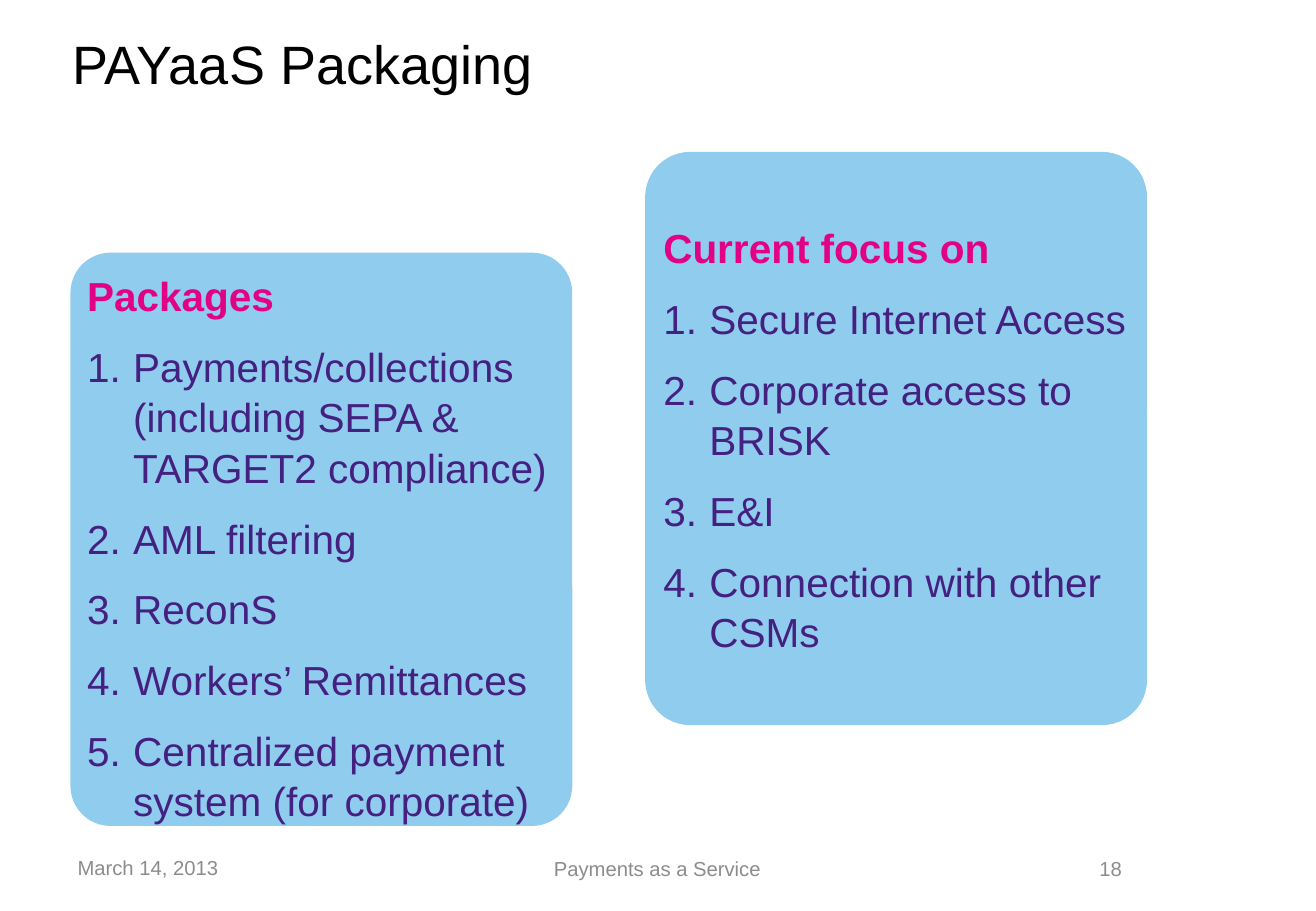
from pptx import Presentation
from pptx import util as u
from pptx.dml.color import RGBColor
from pptx.enum import shapes, text
from pptx.oxml.ns import qn
from lxml import etree

WIDE, HIGH = 10.83, 7.5
LEFT, MID, RIGHT = text.PP_ALIGN.LEFT, text.PP_ALIGN.CENTER, text.PP_ALIGN.RIGHT
TOP, CENTER = text.MSO_ANCHOR.TOP, text.MSO_ANCHOR.MIDDLE
SKY, PINK, PLUM, GRAY, BLACK = "90CCEE", "E20087", "442080", "8C8C8C", "000000"

LABELS = [
    ("PAYaaS Packaging", (0.5, 0.17, 8.62, 0.7), 32, BLACK, LEFT),
    ("March 14, 2013", (0.54, 6.95, 1.71, 0.38), 12, GRAY, LEFT),
    ("Payments as a Service", (2.32, 6.95, 6.18, 0.4), 12, GRAY, MID),
    ("18", (8.75, 6.95, 0.58, 0.4), 12, GRAY, RIGHT),
]
PANELS = [
    ("Packages", [
        "Payments/collections (including SEPA & TARGET2 compliance)",
        "AML filtering",
        "ReconS",
        "Workers’ Remittances",
        "Centralized payment system (for corporate)",
    ], 2.08, 0.08, TOP),
    ("Current focus on", [
        "Secure Internet Access",
        "Corporate access to BRISK",
        "E&I",
        "Connection with other CSMs",
    ], 1.25, 0.09, CENTER),
]
START, STEP = 0.58, 4.73
SIZE = 4.13, 4.72
PAD, INDENT = 0.04, 0.38


def color(code):
    return RGBColor.from_string(code)


def style(para, size, code, bold=False, align=LEFT):
    para.alignment = align
    font = para.font
    font.name, font.size, font.bold = "Arial", u.Pt(size), bold
    font.color.rgb = color(code)


def number(para):
    props = para._p.get_or_add_pPr()
    props.set("marL", str(u.Inches(INDENT)))
    props.set("indent", str(-u.Inches(INDENT)))
    etree.SubElement(props, qn("a:buFont")).set("typeface", "+mj-lt")
    etree.SubElement(props, qn("a:buAutoNum")).set("type", "arabicPeriod")


def label(slide, words, place, size, code, align):
    frame = slide.shapes.add_textbox(*map(u.Inches, place)).text_frame
    frame.word_wrap = True
    frame.vertical_anchor = CENTER
    frame.text = words
    style(frame.paragraphs[0], size, code, align=align)


def panel(slide, left, head, items, top, bend, anchor):
    place = map(u.Inches, (left, top, *SIZE))
    card = slide.shapes.add_shape(shapes.MSO_SHAPE.ROUNDED_RECTANGLE, *place)
    card.adjustments[0] = bend
    card.shadow.inherit = False
    card.fill.solid()
    card.fill.fore_color.rgb = color(SKY)
    card.line.fill.background()
    frame = card.text_frame
    frame.word_wrap = True
    frame.vertical_anchor = anchor
    frame.margin_left = frame.margin_right = u.Inches(PAD)
    frame.margin_top = frame.margin_bottom = u.Inches(PAD)
    frame.text = head
    first = frame.paragraphs[0]
    first.line_spacing = 1.04
    style(first, 24, PINK, True)
    for item in items:
        para = frame.add_paragraph()
        para.text = item
        para.line_spacing = 1.04
        para.space_before = u.Pt(12)
        number(para)
        style(para, 24, PLUM)


def main():
    deck = Presentation()
    deck.slide_width, deck.slide_height = u.Inches(WIDE), u.Inches(HIGH)
    slide = deck.slides.add_slide(deck.slide_layouts[6])
    for row in LABELS:
        label(slide, *row)
    for col, row in enumerate(PANELS):
        panel(slide, START + col * STEP, *row)
    deck.save("out.pptx")


if __name__ == "__main__":
    main()
